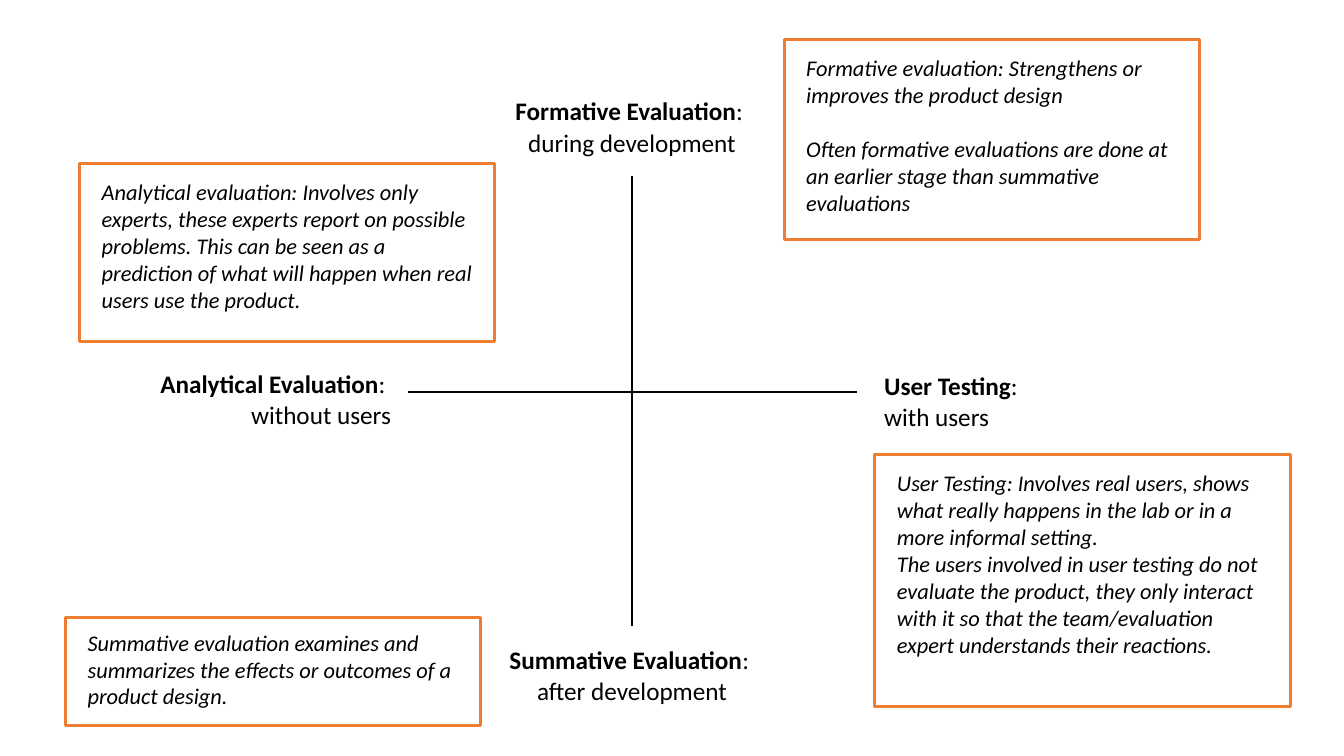
from lxml.etree import SubElement
from pptx import Presentation
from pptx.dml.color import RGBColor
from pptx.enum.shapes import MSO_CONNECTOR as CONN, MSO_SHAPE as SHAPE
from pptx.enum.text import PP_ALIGN as ALIGN
from pptx.oxml.ns import qn
from pptx.util import Inches, Pt

WIDTH, HEIGHT = Inches(13.33), Inches(7.5)
BLACK, ORANGE = "000000", "ED7D31"
FRAME_W = 30.9
LABEL_H = 8.4
AXIS_X, AXIS_Y = 47.03, 51.87


def color(value):
    return RGBColor.from_string(value)


def px(share):
    return round(WIDTH * share / 100)


def py(share):
    return round(HEIGHT * share / 100)


def area(x, y, w, h):
    return px(x), py(y), px(w), py(h)


def add_run(p, text, size=16, bold=False, italic=False):
    r = p.add_run()
    r.text = text
    r.font.name = "Calibri"
    r.font.size = Pt(size)
    r.font.bold = bold
    r.font.italic = italic
    r.font.color.rgb = color(BLACK)


def add_paragraph(tf, first, align=ALIGN.LEFT, before=0):
    p = tf.paragraphs[0] if first else tf.add_paragraph()
    p.alignment = align
    p.space_before = Pt(before)
    return p


def add_axis(s, x1, y1, x2, y2):
    line = s.shapes.add_connector(CONN.STRAIGHT, px(x1), py(y1), px(x2), py(y2))
    line.line.color.rgb = color(BLACK)
    line.line.width = Pt(1.5)
    SubElement(line._element.spPr, qn("a:effectLst"))


def add_label(s, x, y, title, detail, w=FRAME_W, align=ALIGN.CENTER):
    tf = s.shapes.add_textbox(*area(x, y, w, LABEL_H)).text_frame
    tf.word_wrap = True
    tf.margin_left = tf.margin_right = tf.margin_bottom = 0
    tf.margin_top = Inches(0.01)
    p = add_paragraph(tf, True, align, before=1)
    add_run(p, title, size=18, bold=True)
    add_run(p, ": ", size=18)
    add_run(add_paragraph(tf, False, align, before=1), detail, size=18)


def add_note(s, x, y, h, *texts, dy=1.33, gap=0):
    group = s.shapes.add_group_shape()
    tf = group.shapes.add_textbox(*area(x + 0.9, y + dy, 29.03, h - 2 * dy)).text_frame
    tf.word_wrap = True
    for i, text in enumerate(texts):
        p = add_paragraph(tf, i == 0, before=gap if i else 0)
        add_run(p, text, italic=True)
    frame = group.shapes.add_shape(SHAPE.RECTANGLE, *area(x, y, FRAME_W, h))
    frame.shadow.inherit = False
    frame.fill.background()
    frame.line.color.rgb = color(ORANGE)
    frame.line.width = Pt(2.25)


def main():
    prs = Presentation()
    prs.slide_width, prs.slide_height = WIDTH, HEIGHT
    s = prs.slides.add_slide(prs.slide_layouts[6])

    add_axis(s, AXIS_X, 23.33, AXIS_X, 82.8)
    add_axis(s, 63.75, AXIS_Y, 30.38, AXIS_Y)

    add_label(s, 31.58, 12.53, "Formative Evaluation", "during development")
    add_label(s, 31.58, 85.07, "Summative Evaluation", "after development")
    add_label(s, 65.78, 48.8, "User Testing", "with users", w=14.25, align=ALIGN.LEFT)
    add_label(s, 0, 48.53, "Analytical Evaluation", "without users", w=29.1, align=ALIGN.RIGHT)

    add_note(s, 58.35, 5.2, 26.53,
             "Formative evaluation: Strengthens or improves the product design",
             "Often formative evaluations are done at an earlier stage than summative evaluations",
             gap=19.5)
    add_note(s, 4.88, 81.73, 14.27,
             "Summative evaluation examines and summarizes the effects or outcomes of a "
             "product design.", dy=0.8)
    add_note(s, 5.93, 21.6, 23.6,
             "Analytical evaluation: Involves only experts, these experts report on possible "
             "problems. This can be seen as a prediction of what will happen when real users "
             "use the product.")
    add_note(s, 65.1, 60.13, 33.33,
             "User Testing: Involves real users, shows what really happens in the lab or in a "
             "more informal setting.",
             "The users involved in user testing do not evaluate the product, they only interact "
             "with it so that the team/evaluation expert understands their reactions.")

    prs.save("out.pptx")


if __name__ == "__main__":
    main()
